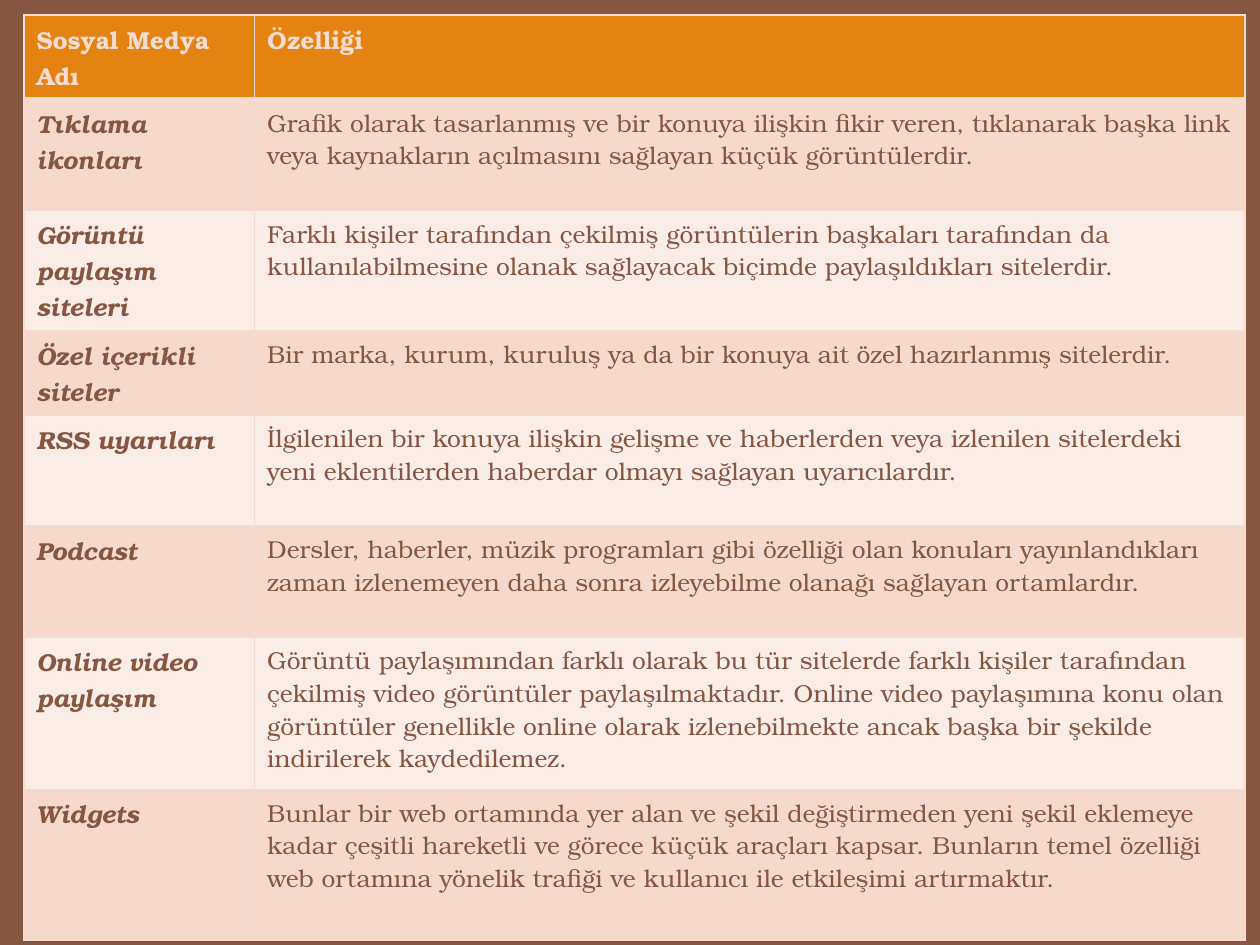
import pptx
import pptx.util
import pptx.dml.color
import pptx.oxml
import pptx.oxml.ns
from lxml import etree

Inches = pptx.util.Inches
Pt = pptx.util.Pt
RGBColor = pptx.dml.color.RGBColor

BROWN = RGBColor(0x86, 0x56, 0x40)
ORANGE = RGBColor(0xE4, 0x83, 0x12)
CREAM = RGBColor(0xF4, 0xDC, 0xD2)
BANDS = [RGBColor(0xF5, 0xD9, 0xCC), RGBColor(0xFA, 0xED, 0xE7)]
FONT = "TeX Gyre Bonum"

HEADINGS = ["Sosyal Medya Adı", "Özelliği"]
MEDIA = [
    ("Tıklama ikonları", "Grafik olarak tasarlanmış ve bir konuya ilişkin fikir veren, tıklanarak başka link veya kaynakların açılmasını sağlayan küçük görüntülerdir."),
    ("Görüntü paylaşım siteleri", "Farklı kişiler tarafından çekilmiş görüntülerin başkaları tarafından da kullanılabilmesine olanak sağlayacak biçimde paylaşıldıkları sitelerdir."),
    ("Özel içerikli siteler", "Bir marka, kurum, kuruluş ya da bir konuya ait özel hazırlanmış sitelerdir."),
    ("RSS uyarıları", "İlgilenilen bir konuya ilişkin gelişme ve haberlerden veya izlenilen sitelerdeki yeni eklentilerden haberdar olmayı sağlayan uyarıcılardır."),
    ("Podcast", "Dersler, haberler, müzik programları gibi özelliği olan konuları yayınlandıkları zaman izlenemeyen daha sonra izleyebilme olanağı sağlayan ortamlardır."),
    ("Online video paylaşım", "Görüntü paylaşımından farklı olarak bu tür sitelerde farklı kişiler tarafından çekilmiş video görüntüler paylaşılmaktadır. Online video paylaşımına konu olan görüntüler genellikle online olarak izlenebilmekte ancak başka bir şekilde indirilerek kaydedilemez."),
    ("Widgets", "Bunlar bir web ortamında yer alan ve şekil değiştirmeden yeni şekil eklemeye kadar çeşitli hareketli ve görece küçük araçları kapsar. Bunların temel özelliği web ortamına yönelik trafiği ve kullanıcı ile etkileşimi artırmaktır."),
]
COLUMN_WIDTHS = [1.83, 7.86]
ROW_HEIGHTS = [0.54, 0.88, 0.88, 0.54, 0.88, 0.88, 1.21, 1.2]


def set_borders(cell, bottom=1):
    properties = cell._tc.get_or_add_tcPr()
    widths = {"lnL": 1, "lnR": 1, "lnT": 1, "lnB": bottom}
    for index, (side, width) in enumerate(widths.items()):
        line = etree.Element(pptx.oxml.ns.qn(f"a:{side}"), w=str(Pt(width)))
        fill = etree.SubElement(line, pptx.oxml.ns.qn("a:solidFill"))
        etree.SubElement(fill, pptx.oxml.ns.qn("a:srgbClr"), val=str(CREAM))
        properties.insert(index, line)


def write_text(cell, text, color=BROWN, bold=False, italic=False):
    para = cell.text_frame.paragraphs[0]
    span = para.add_run()
    span.text = text
    span.font.name = FONT
    span.font.size = Pt(14)
    span.font.color.rgb = color
    span.font.bold = bold
    span.font.italic = italic


def fill_cell(cell, color, bottom=1):
    cell.fill.solid()
    cell.fill.fore_color.rgb = color
    set_borders(cell, bottom)


def add_media_table(page):
    frame = page.shapes.add_table(
        len(ROW_HEIGHTS), len(COLUMN_WIDTHS), Inches(0.19), Inches(0.12),
        Inches(sum(COLUMN_WIDTHS)), Inches(sum(ROW_HEIGHTS)))
    table = frame.table
    for column, width in zip(table.columns, COLUMN_WIDTHS):
        column.width = Inches(width)
    for row, height in zip(table.rows, ROW_HEIGHTS):
        row.height = Inches(height)
    for column, heading in enumerate(HEADINGS):
        cell = table.cell(0, column)
        fill_cell(cell, ORANGE, bottom=3)
        write_text(cell, heading, color=CREAM, bold=True)
    for row, (name, feature) in enumerate(MEDIA, start=1):
        name_cell, feature_cell = table.cell(row, 0), table.cell(row, 1)
        for cell in (name_cell, feature_cell):
            fill_cell(cell, BANDS[(row - 1) % 2])
        write_text(name_cell, name, bold=True, italic=True)
        write_text(feature_cell, feature)


def main():
    deck = pptx.Presentation()
    deck.slide_width = Inches(10)
    deck.slide_height = Inches(7.5)
    page = deck.slides.add_slide(deck.slide_layouts[6])
    page.background.fill.solid()
    page.background.fill.fore_color.rgb = BROWN
    add_media_table(page)
    deck.save("out.pptx")


if __name__ == "__main__":
    main()
